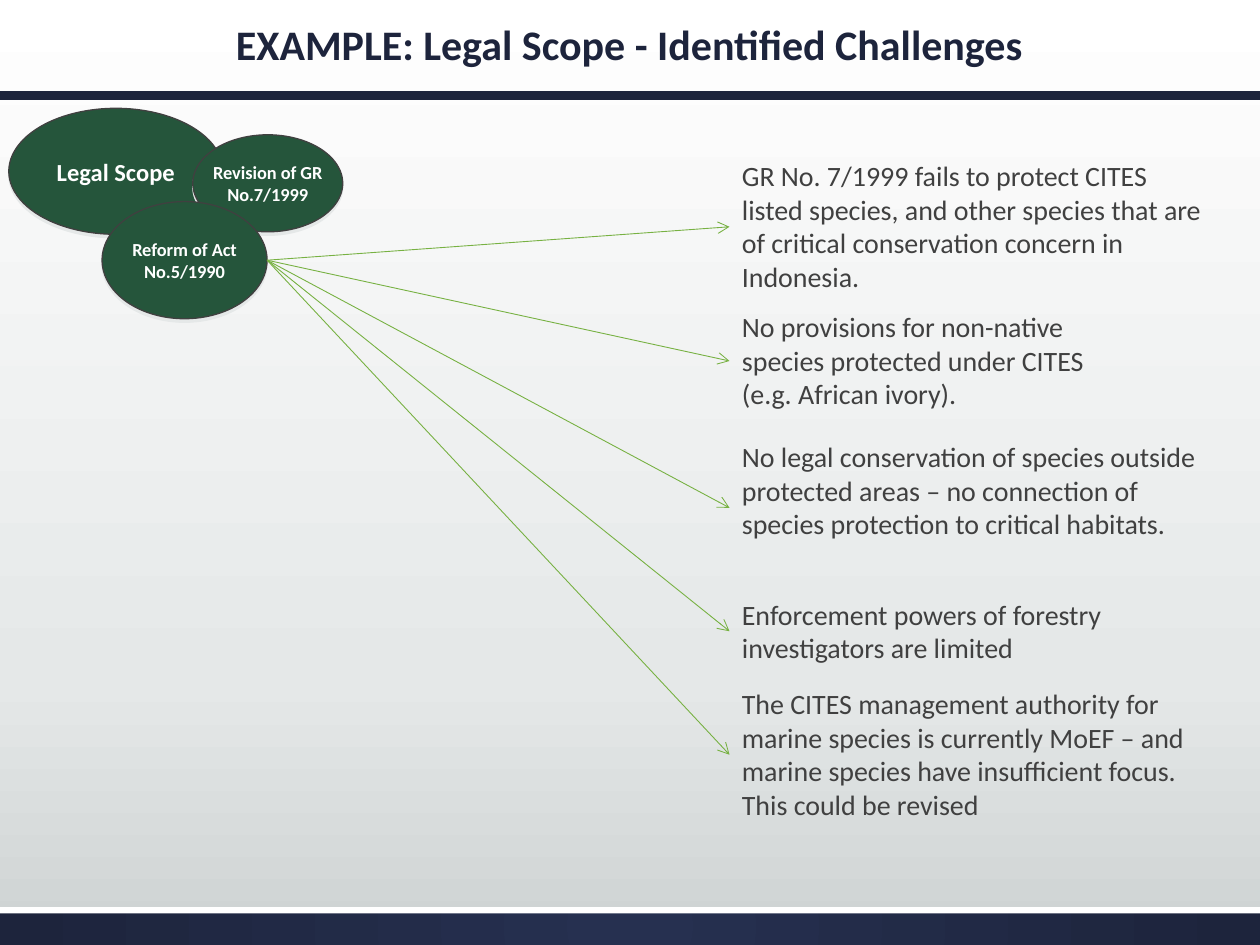
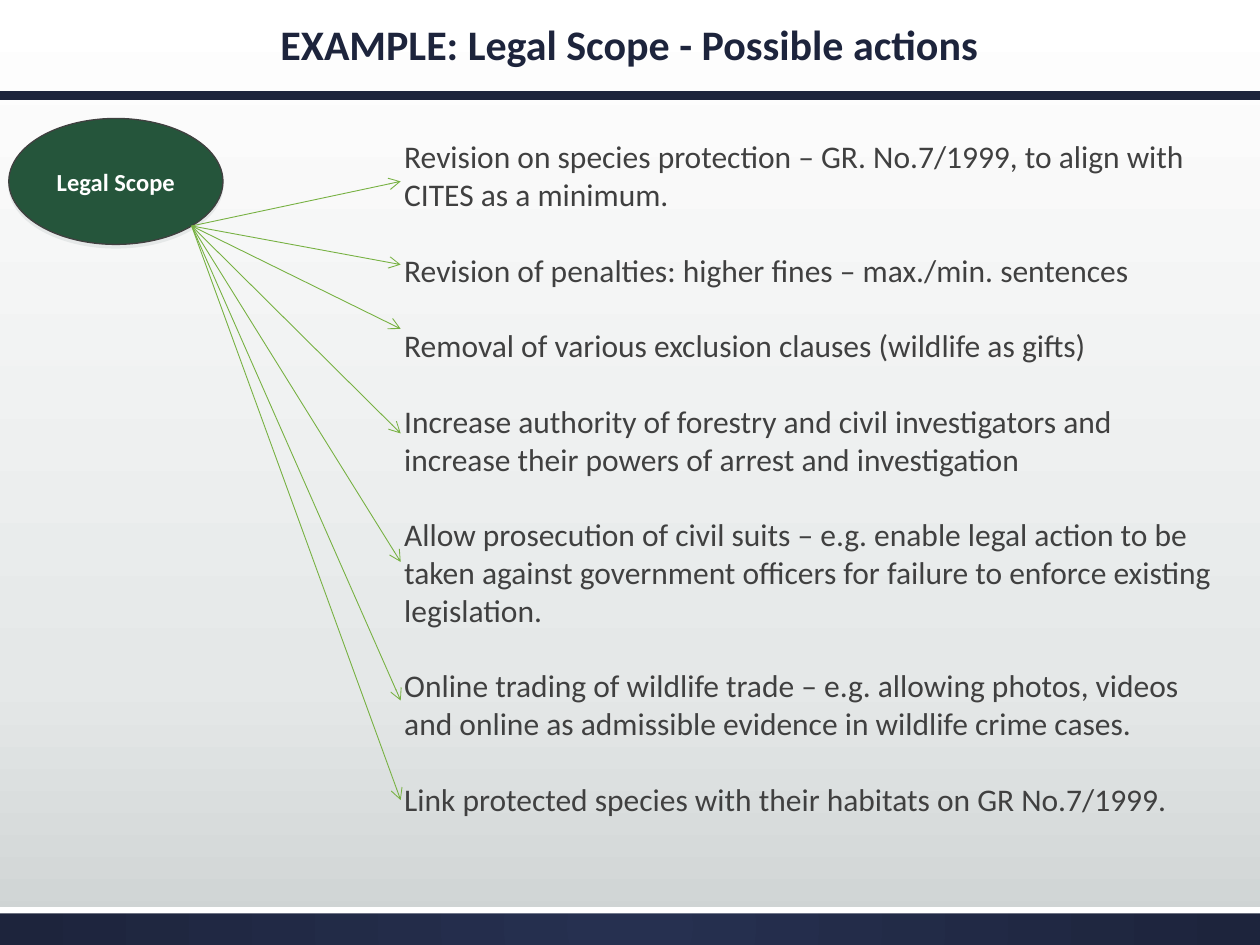
import dataclasses
import typing

import pptx
import pptx.dml.color
import pptx.enum.shapes
import pptx.enum.text
import pptx.oxml
import pptx.oxml.ns
import pptx.util
from pptx.util import Inches

RGBColor = pptx.dml.color.RGBColor
Shapes = pptx.enum.shapes.MSO_SHAPE
Align = pptx.enum.text.PP_ALIGN
Anchor = pptx.enum.text.MSO_ANCHOR
qn = pptx.oxml.ns.qn

NAVY = RGBColor(0x1D, 0x24, 0x3C)
NAVY_LIGHT = RGBColor(0x26, 0x30, 0x50)
WHITE = RGBColor(0xFF, 0xFF, 0xFF)
MIST = RGBColor(0xE5, 0xE8, 0xE8)
MIST_DARK = RGBColor(0xCD, 0xD2, 0xD2)
FOREST = RGBColor(0x25, 0x55, 0x3B)
CHARCOAL = RGBColor(0x40, 0x40, 0x40)
LEAF = RGBColor(0x77, 0xB1, 0x42)

FONT_NAME = "Calibri"
SLIDE_WIDTH, SLIDE_HEIGHT = 10, 7.5
FOOTER_TOP = 7.2
DRAWING_NS = pptx.oxml.ns.nsdecls("a")
DOWNWARD = '<a:lin ang="5400000" scaled="0"/>'
FROM_CENTRE = ('<a:path path="circle">'
               '<a:fillToRect l="50000" t="50000" r="50000" b="50000"/></a:path>')


@dataclasses.dataclass(frozen=True)
class Area:
    left: float
    top: float
    width: float
    height: float

    def lengths(self) -> list[int]:
        return [Inches(side) for side in dataclasses.astuple(self)]

    def inset(self, across: float, down: float) -> "Area":
        return Area(self.left + across, self.top + down,
                    self.width - 2 * across, self.height - 2 * down)

    def point_at(self, across: float, down: float) -> tuple[float, float]:
        """Point at the given fractions of the width and the height."""
        return self.left + across * self.width, self.top + down * self.height


@dataclasses.dataclass(frozen=True)
class TextStyle:
    size: float
    color: RGBColor
    bold: bool = False
    align: Align = Align.LEFT
    anchor: Anchor = Anchor.TOP
    margin: typing.Optional[float] = None
    gap: float = 0


@dataclasses.dataclass(frozen=True)
class Bubble:
    label: str
    area: Area
    size: float


@dataclasses.dataclass(frozen=True)
class Challenge:
    text: str
    top: float
    height: float
    width: float = 3.86


TITLE_STYLE = TextStyle(24, NAVY, True, Align.CENTER, Anchor.BOTTOM)
CHALLENGE_STYLE = TextStyle(16, CHARCOAL)
ACTION_STYLE = TextStyle(18, CHARCOAL, gap=21.6)
TITLE_AREA = Area(0.33, 0.17, 9.33, 0.43)

REFORM = Bubble("Reform of Act No.5/1990", Area(0.81, 1.6, 1.31, 0.93), 10.5)
REVISION = Bubble("Revision of GR No.7/1999", Area(1.53, 1.07, 1.19, 0.77), 10.5)
CHALLENGE_LEFT = 5.79
CHALLENGES = [
    Challenge("GR No. 7/1999 fails to protect CITES listed species, and other species "
              "that are of critical conservation concern in Indonesia.", 1.21, 1.18),
    Challenge("No provisions for non-native species protected under CITES "
              "(e.g. African ivory).", 2.41, 0.91, 3.12),
    Challenge("No legal conservation of species outside protected areas – no connection "
              "of species protection to critical habitats.", 3.44, 1.18),
    Challenge("Enforcement powers of forestry investigators are limited", 4.69, 0.64),
    Challenge("The CITES management authority for marine species is currently MoEF – and "
              "marine species have insufficient focus. This could be revised", 5.4, 1.18),
]

ACTION_AREA = Area(3.11, 1.04, 6.69, 6.16)
ACTION_ARROW_X = 3.18
ACTIONS = {  # text: height at which its arrow ends
    "Revision on species protection – GR. No.7/1999, to align with CITES as a minimum.": 1.44,
    "Revision of penalties: higher fines – max./min. sentences": 2.1,
    "Removal of various exclusion clauses (wildlife as gifts)": 2.61,
    "Increase authority of forestry and civil investigators and increase their powers "
    "of arrest and investigation": 3.44,
    "Allow prosecution of civil suits – e.g. enable legal action to be taken against "
    "government officers for failure to enforce existing legislation.": 4.46,
    "Online trading of wildlife trade – e.g. allowing photos, videos and online as "
    "admissible evidence in wildlife crime cases.": 5.56,
    "Link protected species with their habitats on GR No.7/1999.": 6.35,
}


def set_gradient(owner, fill, stops: dict[int, RGBColor], direction: str) -> None:
    """Fill with colours keyed by percent; owner holds the fill's XML."""
    fill.gradient()
    gradient = next(owner.element.iter(qn("a:gradFill")))
    for child in list(gradient):
        gradient.remove(child)
    stop_list = "".join(f'<a:gs pos="{percent * 1000}"><a:srgbClr val="{color}"/></a:gs>'
                        for percent, color in stops.items())
    for xml in (f"<a:gsLst {DRAWING_NS}>{stop_list}</a:gsLst>",
                direction.replace(" ", f" {DRAWING_NS} ", 1)):
        gradient.append(pptx.oxml.parse_xml(xml))


def add_preset(page, preset: Shapes, area: Area, color: typing.Optional[RGBColor] = None):
    shape = page.shapes.add_shape(preset, *area.lengths())
    shape.shadow.inherit = False
    shape.line.fill.background()
    if color is not None:
        shape.fill.solid()
        shape.fill.fore_color.rgb = color
    return shape


def add_text(page, area: Area, texts: list[str], style: TextStyle):
    box = page.shapes.add_textbox(*area.lengths())
    frame = box.text_frame
    frame.word_wrap = True
    frame.vertical_anchor = style.anchor
    if style.margin is not None:
        for side in ("left", "top", "right", "bottom"):
            setattr(frame, f"margin_{side}", Inches(style.margin))
    font_values = {"name": FONT_NAME, "size": pptx.util.Pt(style.size), "bold": style.bold}
    for index, text in enumerate(texts):
        para = frame.add_paragraph() if index else frame.paragraphs[0]
        para.alignment = style.align
        if index:
            para.space_before = pptx.util.Pt(style.gap)
        span = para.add_run()
        span.text = text
        for name, value in font_values.items():
            setattr(span.font, name, value)
        span.font.color.rgb = style.color
    return box


def add_line(page, start: tuple[float, float], end: tuple[float, float],
             color: RGBColor, width: float):
    line = page.shapes.add_connector(pptx.enum.shapes.MSO_CONNECTOR.STRAIGHT,
                                     *map(Inches, start + end))
    line.line.color.rgb = color
    line.line.width = pptx.util.Pt(width)
    line.element.spPr.append(pptx.oxml.parse_xml(f"<a:effectLst {DRAWING_NS}/>"))
    return line


def add_arrow(page, start: tuple[float, float], end: tuple[float, float]):
    arrow = add_line(page, start, end, LEAF, 0.5)
    outline = arrow.element.spPr.find(qn("a:ln"))
    outline.append(pptx.oxml.parse_xml(f'<a:tailEnd {DRAWING_NS} type="arrow"/>'))
    return arrow


def add_bubble(page, bubble: Bubble) -> None:
    ellipse = add_preset(page, Shapes.OVAL, bubble.area, FOREST)
    ellipse.line.color.rgb = CHARCOAL
    ellipse.line.width = pptx.util.Pt(0.75)
    effects = ellipse.element.spPr.find(qn("a:effectLst"))
    effects.append(pptx.oxml.parse_xml(
        f'<a:outerShdw {DRAWING_NS} dist="{pptx.util.Pt(2)}" dir="5400000" rotWithShape="0">'
        f'<a:srgbClr val="{MIST}"/></a:outerShdw>'))
    style = TextStyle(bubble.size, WHITE, True, Align.CENTER, Anchor.MIDDLE, margin=0)
    add_text(page, bubble.area.inset(0.05, 0.04), [bubble.label], style)


def legal_scope_bubble(top: float) -> Bubble:
    return Bubble("Legal Scope", Area(0.07, top, 1.7, 1), 14)


def add_page(deck, title: str):
    """Add a slide with the shared background, bands and title."""
    page = deck.slides.add_slide(deck.slide_layouts[6])
    set_gradient(page, page.background.fill, {0: WHITE, 72: MIST, 100: MIST_DARK}, DOWNWARD)
    footer = add_preset(page, Shapes.RECTANGLE,
                        Area(0, FOOTER_TOP, SLIDE_WIDTH, SLIDE_HEIGHT - FOOTER_TOP))
    set_gradient(footer, footer.fill, {0: NAVY_LIGHT, 100: NAVY}, FROM_CENTRE)
    add_preset(page, Shapes.RECTANGLE, Area(0, FOOTER_TOP, SLIDE_WIDTH, 0.05), WHITE)
    add_line(page, (0, 0.76), (SLIDE_WIDTH, 0.76), NAVY, 5)
    add_text(page, TITLE_AREA, [title], TITLE_STYLE)
    return page


def build_challenges(deck) -> None:
    page = add_page(deck, "EXAMPLE: Legal Scope - Identified Challenges")
    for bubble in (legal_scope_bubble(0.86), REVISION, REFORM):
        add_bubble(page, bubble)
    start = REFORM.area.point_at(1, 0.5)
    for challenge in CHALLENGES:
        area = Area(CHALLENGE_LEFT, challenge.top, challenge.width, challenge.height)
        box = add_text(page, area, [challenge.text], CHALLENGE_STYLE)
        add_arrow(page, start, area.point_at(0, 0.5)).end_connect(box, 1)


def build_actions(deck) -> None:
    page = add_page(deck, "EXAMPLE: Legal Scope - Possible actions")
    scope = legal_scope_bubble(0.94)
    add_bubble(page, scope)
    add_text(page, ACTION_AREA, list(ACTIONS), ACTION_STYLE)
    lower_right = 0.5 + 0.5 ** 1.5  # ellipse outline at 45 degrees
    start = scope.area.point_at(lower_right, lower_right)
    for arrow_y in ACTIONS.values():
        add_arrow(page, start, (ACTION_ARROW_X, arrow_y))


def main() -> None:
    deck = pptx.Presentation()
    deck.slide_width = Inches(SLIDE_WIDTH)
    deck.slide_height = Inches(SLIDE_HEIGHT)
    build_challenges(deck)
    build_actions(deck)
    deck.save("out.pptx")


if __name__ == "__main__":
    main()
